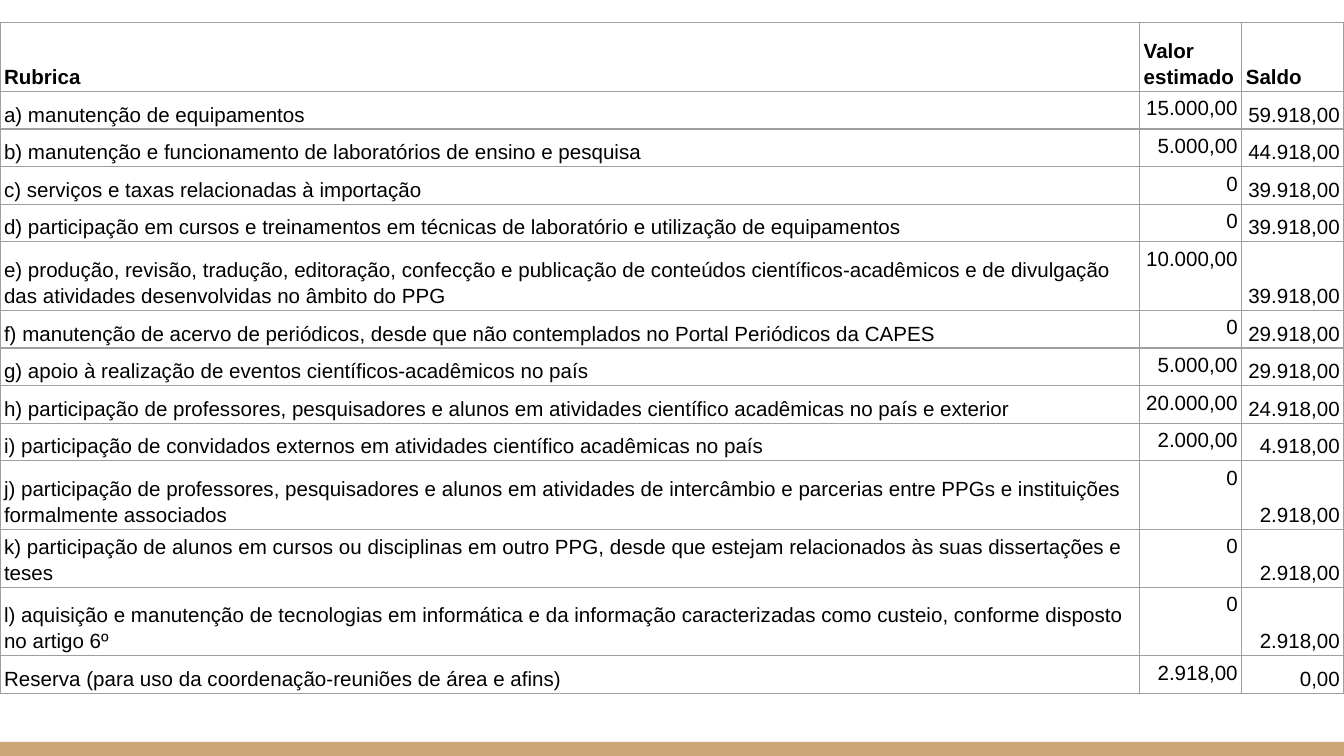
from lxml import etree
from pptx import Presentation
from pptx.dml.color import RGBColor
from pptx.enum.shapes import MSO_SHAPE
from pptx.enum.text import MSO_ANCHOR, PP_ALIGN
from pptx.oxml.ns import qn
from pptx.util import Inches, Pt

RECT = MSO_SHAPE.RECTANGLE
TOP, BOTTOM = MSO_ANCHOR.TOP, MSO_ANCHOR.BOTTOM
LEFT, RIGHT = PP_ALIGN.LEFT, PP_ALIGN.RIGHT

COLORS = {"text": "000000", "grid": "9E9E9E", "band": "CCA677"}
WIDE = 10
HIGH = WIDE * 9 / 16
WIDTHS = [8.48, 0.76, 0.76]
SHORT, TALL = 0.28, 0.51
TALL_ROWS = {0, 5, 10, 12}
ROWS = [
    ("Rubrica", "Valor estimado", "Saldo"),
    ("a) manutenção de equipamentos", "15.000,00", "59.918,00"),
    ("b) manutenção e funcionamento de laboratórios de ensino e pesquisa", "5.000,00", "44.918,00"),
    ("c) serviços e taxas relacionadas à importação", "0", "39.918,00"),
    ("d) participação em cursos e treinamentos em técnicas de laboratório e utilização de equipamentos",
     "0", "39.918,00"),
    ("e) produção, revisão, tradução, editoração, confecção e publicação de conteúdos "
     "científicos-acadêmicos e de divulgação das atividades desenvolvidas no âmbito do PPG",
     "10.000,00", "39.918,00"),
    ("f) manutenção de acervo de periódicos, desde que não contemplados no Portal Periódicos da CAPES",
     "0", "29.918,00"),
    ("g) apoio à realização de eventos científicos-acadêmicos no país", "5.000,00", "29.918,00"),
    ("h) participação de professores, pesquisadores e alunos em atividades científico acadêmicas "
     "no país e exterior", "20.000,00", "24.918,00"),
    ("i) participação de convidados externos em atividades científico acadêmicas no país",
     "2.000,00", "4.918,00"),
    ("j) participação de professores, pesquisadores e alunos em atividades de intercâmbio e parcerias "
     "entre PPGs e instituições formalmente associados", "0", "2.918,00"),
    ("k) participação de alunos em cursos ou disciplinas em outro PPG, desde que estejam relacionados "
     "às suas dissertações e teses", "0", "2.918,00"),
    ("l) aquisição e manutenção de tecnologias em informática e da informação caracterizadas como "
     "custeio, conforme disposto no artigo 6º", "0", "2.918,00"),
    ("Reserva (para uso da coordenação-reuniões de área e afins)", "2.918,00", "0,00"),
]


def assign(target, values):
    for name, value in values.items():
        setattr(target, name, value)


class Page:
    font = {"name": "Arial", "size": Pt(11)}
    inset = {
        "margin_left": Inches(0.03), "margin_right": Inches(0.03),
        "margin_top": Inches(0.02), "margin_bottom": Inches(0.02),
    }
    line = Pt(0.68)

    def __init__(self, slide):
        self.slide = slide

    def color(self, name):
        return RGBColor.from_string(COLORS[name])

    def band(self, left, top, width, height):
        shape = self.slide.shapes.add_shape(
            RECT, Inches(left), Inches(top), Inches(width), Inches(height))
        shape.shadow.inherit = False
        shape.fill.solid()
        shape.fill.fore_color.rgb = self.color("band")
        shape.line.fill.background()

    def border(self, cell):
        props = cell._tc.get_or_add_tcPr()
        for side in ("lnL", "lnR", "lnT", "lnB"):
            edge = etree.SubElement(props, qn(f"a:{side}"), w=str(self.line))
            fill = etree.SubElement(edge, qn("a:solidFill"))
            etree.SubElement(fill, qn("a:srgbClr"), val=COLORS["grid"])

    def cell(self, cell, text, anchor, align, bold):
        assign(cell, {**self.inset, "vertical_anchor": anchor})
        self.border(cell)
        cell.fill.background()
        para = cell.text_frame.paragraphs[0]
        assign(para, {"alignment": align, "line_spacing": 1.15})
        run = para.add_run()
        run.text = text
        assign(run.font, {**self.font, "bold": bold})
        run.font.color.rgb = self.color("text")

    def table(self, left, top, widths, heights, rows):
        table = self.slide.shapes.add_table(
            len(rows), len(widths), Inches(left), Inches(top),
            Inches(sum(widths)), Inches(sum(heights))).table
        assign(table, {"first_row": False, "horz_banding": False})
        for column, width in zip(table.columns, widths):
            column.width = Inches(width)
        for r, (height, texts) in enumerate(zip(heights, rows)):
            table.rows[r].height = Inches(height)
            head = r == 0
            for c, text in enumerate(texts):
                anchor = TOP if c == 1 and not head else BOTTOM
                align = LEFT if c == 0 or head else RIGHT
                self.cell(table.cell(r, c), text, anchor, align, head)


def main():
    deck = Presentation()
    assign(deck, {"slide_width": Inches(WIDE), "slide_height": Inches(HIGH)})
    page = Page(deck.slides.add_slide(deck.slide_layouts[6]))
    page.band(0, 5.52, WIDE, HIGH - 5.52)
    heights = [TALL if r in TALL_ROWS else SHORT for r in range(len(ROWS))]
    page.table(0, 0.17, WIDTHS, heights, ROWS)
    deck.save("out.pptx")


if __name__ == "__main__":
    main()
